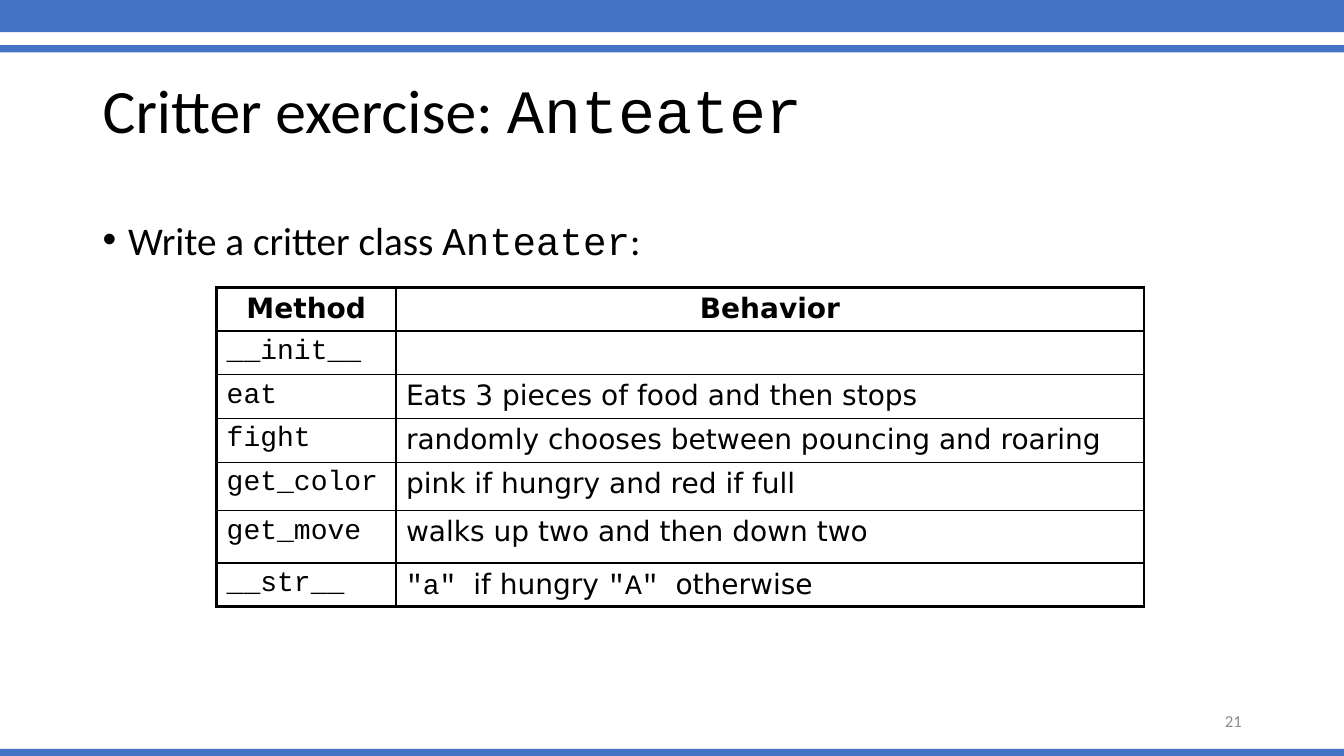
from dataclasses import dataclass

from lxml import etree
from pptx import Presentation
from pptx.dml.color import RGBColor
from pptx.enum.shapes import MSO_SHAPE
from pptx.enum.text import MSO_ANCHOR, PP_ALIGN
from pptx.oxml.ns import qn
from pptx.util import Cm, Pt

RECTANGLE = MSO_SHAPE.RECTANGLE
MIDDLE, TOP = MSO_ANCHOR.MIDDLE, MSO_ANCHOR.TOP
LEFT, CENTER, RIGHT = PP_ALIGN.LEFT, PP_ALIGN.CENTER, PP_ALIGN.RIGHT


@dataclass(frozen=True)
class Theme:
    blue: str = "4472C4"
    black: str = "000000"
    gray: str = "8C8C8C"
    body_font: str = "Calibri"
    code_font: str = "Courier New"
    table_font: str = "DejaVu Sans"
    title_size: int = 44
    body_size: int = 28
    table_size: int = 20
    number_size: int = 12
    outer_line: float = 2.25
    inner_line: float = 1


THEME = Theme()
SLIDE_WIDTH, SLIDE_HEIGHT = 33.87, 19.05
MARGIN, CONTENT_WIDTH = 2.34, 29.21
BARS = [(0, 0.81), (1.14, 0.18), (18.87, 0.18)]
COLUMN_WIDTHS = [4.52, 18.85]
ROW_HEIGHTS = [1.09, 1.09, 1.09, 1.09, 1.22, 1.32, 1.09]

# Each span is a pair of text and font.
CODE, PROSE = THEME.code_font, THEME.table_font
METHODS = [
    ("__init__", []),
    ("eat", [("Eats 3 pieces of food and then stops", PROSE)]),
    ("fight", [("randomly chooses between pouncing and roaring", PROSE)]),
    ("get_color", [("pink if hungry and red if full", PROSE)]),
    ("get_move", [("walks up two and then down two", PROSE)]),
    ("__str__", [('"a" ', CODE), ("if hungry ", PROSE),
                 ('"A" ', CODE), ("otherwise", PROSE)]),
]


def write_spans(para, spans, *, size, color=THEME.black, bold=False, align=LEFT):
    para.alignment = align
    for text, font in spans:
        span = para.add_run()
        span.text = text
        span.font.name = font
        span.font.size = Pt(size)
        span.font.bold = bold
        span.font.color.rgb = RGBColor.from_string(color)


def add_bar(page, top, height):
    bar = page.shapes.add_shape(RECTANGLE, 0, Cm(top), Cm(SLIDE_WIDTH), Cm(height))
    bar.shadow.inherit = False
    bar.fill.solid()
    bar.fill.fore_color.rgb = RGBColor.from_string(THEME.blue)
    bar.line.fill.background()


def add_text(page, left, top, width, height, spans, *, anchor=TOP,
             line_spacing=1.0, space_before=0, **text_format):
    """Add a one-paragraph text box and return its paragraph."""
    box = page.shapes.add_textbox(Cm(left), Cm(top), Cm(width), Cm(height))
    box.text_frame.word_wrap = True
    box.text_frame.vertical_anchor = anchor
    para = box.text_frame.paragraphs[0]
    para.line_spacing = line_spacing
    para.space_before = Pt(space_before)
    write_spans(para, spans, **text_format)
    return para


def add_bullet(para, indent):
    properties = para._p.get_or_add_pPr()
    properties.set("marL", str(Cm(indent)))
    properties.set("indent", str(-Cm(indent)))
    etree.SubElement(properties, qn("a:buFont")).set("typeface", "Arial")
    etree.SubElement(properties, qn("a:buChar")).set("char", "•")


def set_relative_space_before(para, percent):
    properties = para._p.get_or_add_pPr()
    spacing = etree.SubElement(properties, qn("a:spcBef"))
    etree.SubElement(spacing, qn("a:spcPct")).set("val", str(percent * 1000))


def set_borders(cell, outer_sides):
    """Rule all four sides, with the heavy line on the outer ones."""
    properties = cell._tc.get_or_add_tcPr()
    for side in "LRTB":
        width = THEME.outer_line if side in outer_sides else THEME.inner_line
        line = etree.SubElement(properties, qn(f"a:ln{side}"), w=str(Pt(width)))
        fill = etree.SubElement(line, qn("a:solidFill"))
        etree.SubElement(fill, qn("a:srgbClr")).set("val", THEME.black)


def fill_cell(cell, spans, outer_sides, **text_format):
    set_borders(cell, outer_sides)
    cell.fill.background()
    para = cell.text_frame.paragraphs[0]
    set_relative_space_before(para, 20)
    write_spans(para, spans, size=THEME.table_size, **text_format)


def add_method_table(page, left, top):
    rows = [([("Method", PROSE)], [("Behavior", PROSE)])]
    rows += [([(name, CODE)], behavior) for name, behavior in METHODS]
    table = page.shapes.add_table(
        len(rows), len(COLUMN_WIDTHS), Cm(left), Cm(top),
        Cm(sum(COLUMN_WIDTHS)), Cm(sum(ROW_HEIGHTS))).table
    table.first_row = table.horz_banding = False
    for column, width in zip(table.columns, COLUMN_WIDTHS):
        column.width = Cm(width)
    for row, height in zip(table.rows, ROW_HEIGHTS):
        row.height = Cm(height)
    for row_index, row in enumerate(rows):
        header = row_index == 0
        edge = "T" if header else "B" if row_index == len(rows) - 1 else ""
        for column_index, spans in enumerate(row):
            fill_cell(table.cell(row_index, column_index), spans,
                      edge + "LR"[column_index], bold=header,
                      align=CENTER if header else LEFT)


def main():
    deck = Presentation()
    deck.slide_width, deck.slide_height = Cm(SLIDE_WIDTH), Cm(SLIDE_HEIGHT)
    page = deck.slides.add_slide(deck.slide_layouts[6])
    for top, height in BARS:
        add_bar(page, top, height)
    add_text(page, MARGIN, 1.02, CONTENT_WIDTH, 3.68,
             [("Critter exercise: ", THEME.body_font), ("Anteater", CODE)],
             size=THEME.title_size, anchor=MIDDLE, line_spacing=0.9)
    task = add_text(page, MARGIN, 5.08, CONTENT_WIDTH, 12.09,
                    [("Write a critter class ", THEME.body_font),
                     ("Anteater", CODE), (":", THEME.body_font)],
                    size=THEME.body_size, line_spacing=1.2, space_before=10)
    add_bullet(task, 0.64)
    add_method_table(page, 5.46, 7.24)
    add_text(page, 23.93, 17.65, 7.62, 1.02, [("21", THEME.body_font)],
             size=THEME.number_size, color=THEME.gray, anchor=MIDDLE, align=RIGHT)
    deck.save("out.pptx")


if __name__ == "__main__":
    main()
